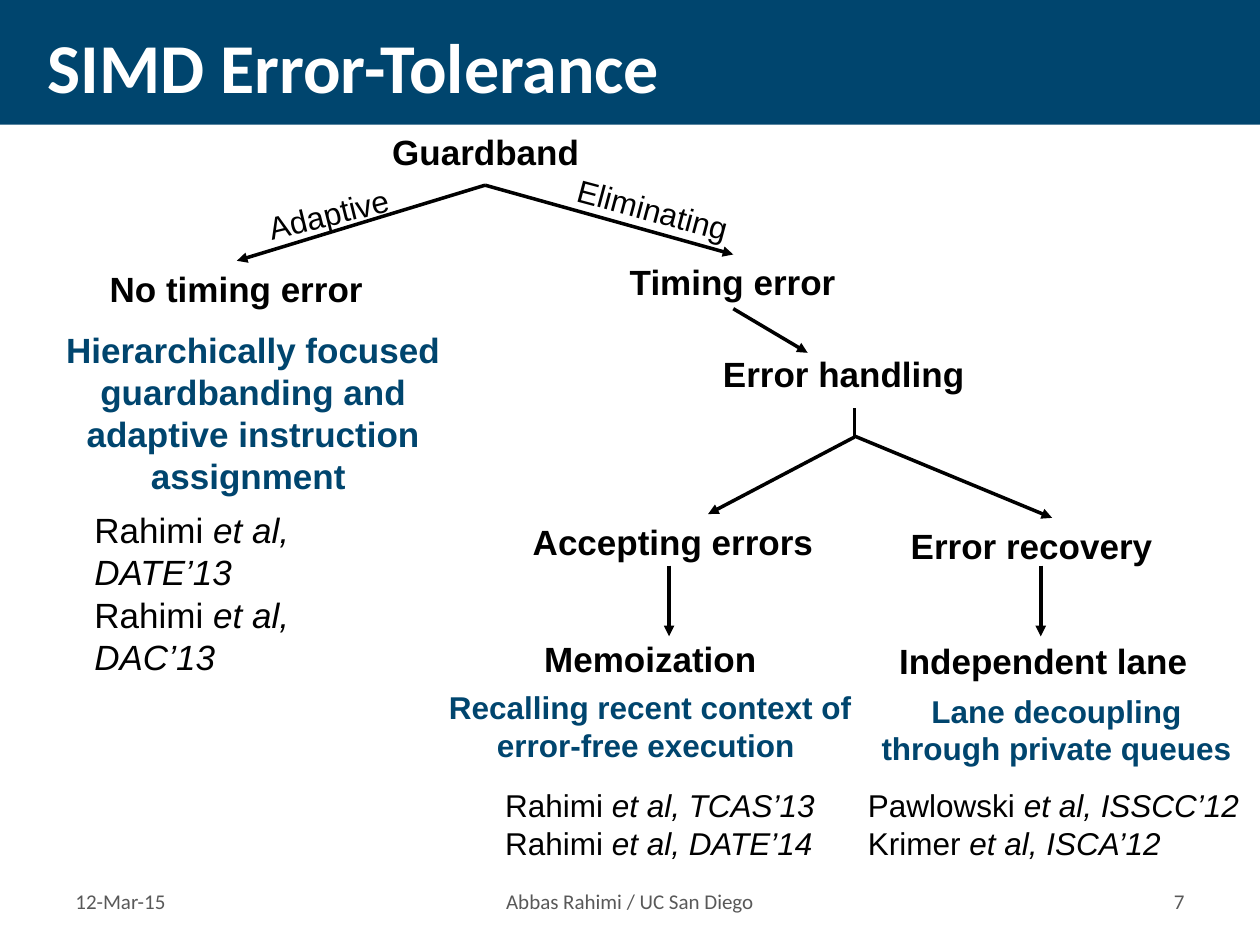
import pptx
import pptx.dml.color
import pptx.enum.shapes
import pptx.enum.text
import pptx.oxml.ns
import pptx.util
from lxml import etree
from pptx.util import Inches

NAVY = pptx.dml.color.RGBColor(0x00, 0x45, 0x6E)
BLACK = pptx.dml.color.RGBColor(0, 0, 0)
WHITE = pptx.dml.color.RGBColor(0xFF, 0xFF, 0xFF)
GRAY = pptx.dml.color.RGBColor(0x59, 0x59, 0x59)
LEFT = pptx.enum.text.PP_ALIGN.LEFT
CENTER = pptx.enum.text.PP_ALIGN.CENTER
RIGHT = pptx.enum.text.PP_ALIGN.RIGHT
TOP = pptx.enum.text.MSO_ANCHOR.TOP
MIDDLE = pptx.enum.text.MSO_ANCHOR.MIDDLE

deck = pptx.Presentation()
deck.slide_width = Inches(10)
deck.slide_height = Inches(7.5)
slide = deck.slides.add_slide(deck.slide_layouts[6])


def add_text(text, left, top, width, height, size=20, font="Arial", color=BLACK,
             bold=False, align=LEFT, anchor=TOP, rotation=0):
    """Add a text box; in each line, what follows a "|" is italic."""
    box = slide.shapes.add_textbox(Inches(left), Inches(top), Inches(width), Inches(height))
    box.rotation = rotation
    frame = box.text_frame
    frame.word_wrap = True
    frame.vertical_anchor = anchor
    for index, line in enumerate(text.split("\n")):
        para = frame.add_paragraph() if index else frame.paragraphs[0]
        para.alignment = align
        for part, words in enumerate(line.split("|")):
            span = para.add_run()
            span.text = words
            span.font.size = pptx.util.Pt(size)
            span.font.name = font
            span.font.color.rgb = color
            span.font.bold = bold
            span.font.italic = part == 1


def add_line(x1, y1, x2, y2, arrow=True):
    line = slide.shapes.add_connector(pptx.enum.shapes.MSO_CONNECTOR.STRAIGHT,
                                      Inches(x1), Inches(y1), Inches(x2), Inches(y2))
    line.line.color.rgb = BLACK
    line.line.width = pptx.util.Pt(2)
    if arrow:
        outline = line.line._get_or_add_ln()
        etree.SubElement(outline, pptx.oxml.ns.qn("a:tailEnd"), type="triangle")
    etree.SubElement(line._element.spPr, pptx.oxml.ns.qn("a:effectLst"))


# Title band and footer
band = slide.shapes.add_shape(pptx.enum.shapes.MSO_SHAPE.RECTANGLE,
                              0, 0, Inches(10), Inches(0.99))
band.shadow.inherit = False
band.fill.solid()
band.fill.fore_color.rgb = NAVY
band.line.fill.background()
add_text("SIMD Error-Tolerance", 0.28, 0.1, 9.45, 0.84, size=40, font="Calibri",
         color=WHITE, bold=True, anchor=MIDDLE)
for text, left, width, align in [
    ("12-Mar-15", 0.5, 1.19, LEFT),
    ("Abbas Rahimi / UC San Diego", 1.85, 6.3, CENTER),
    ("7", 8.31, 1.19, RIGHT),
]:
    add_text(text, left, 6.95, width, 0.4, size=12, font="Calibri", color=GRAY,
             align=align, anchor=MIDDLE)

# Tree branches
for ends in [
    (3.85, 1.47, 1.88, 2.07),
    (3.85, 1.47, 5.82, 2.02),
    (5.82, 2.45, 6.41, 2.8),
    (6.78, 3.47, 5.62, 4.08),
    (6.78, 3.46, 8.35, 4.11),
    (5.31, 4.49, 5.31, 5.05),
    (8.26, 4.49, 8.26, 5.05),
]:
    add_line(*ends)
add_line(6.78, 3.24, 6.78, 3.47, arrow=False)
add_text("Adaptive", 2.02, 1.48, 1.31, 0.4, size=18, rotation=346.1)
add_text("Eliminating", 4.47, 1.47, 1.49, 0.4, size=18, rotation=15)

# Tree nodes
for text, left, top, width, align in [
    ("Guardband", 2.4, 0.99, 2.91, CENTER),
    ("No timing error", 0.55, 2.07, 2.65, CENTER),
    ("Timing error", 4.36, 2.02, 2.91, CENTER),
    ("Error handling ", 5.28, 2.75, 2.91, CENTER),
    ("Accepting errors", 4.13, 4.08, 2.97, LEFT),
    ("Error recovery", 7.13, 4.11, 2.43, LEFT),
    ("Memoization", 4.22, 5.01, 2.05, LEFT),
    ("Independent lane", 6.66, 5.03, 3.24, CENTER),
]:
    add_text(text, left, top, width, 0.44, bold=True, align=align)

# Techniques
for text, left, top, width, height, size in [
    ("Hierarchically focused guardbanding and adaptive instruction assignment ",
     0.11, 2.56, 3.8, 1.45, 20),
    ("Recalling recent context of error-free execution ", 3.28, 5.41, 3.76, 0.71, 18),
    ("Lane decoupling through private queues", 6.83, 5.44, 3.11, 0.71, 18),
]:
    add_text(text, left, top, width, height, size=size, color=NAVY, bold=True, align=CENTER)

# Citations
for text, left, top, width, size in [
    ("Rahimi |et al, DATE’13\nRahimi |et al, DAC’13", 0.65, 3.99, 2.38, 20),
    ("Rahimi |et al, TCAS’13\nRahimi |et al, DATE’14", 3.91, 6.19, 2.68, 18),
    ("Pawlowski |et al, ISSCC’12\nKrimer |et al, ISCA’12", 6.79, 6.19, 3.18, 18),
]:
    add_text(text, left, top, width, 0.71, size=size)

deck.save("out.pptx")
